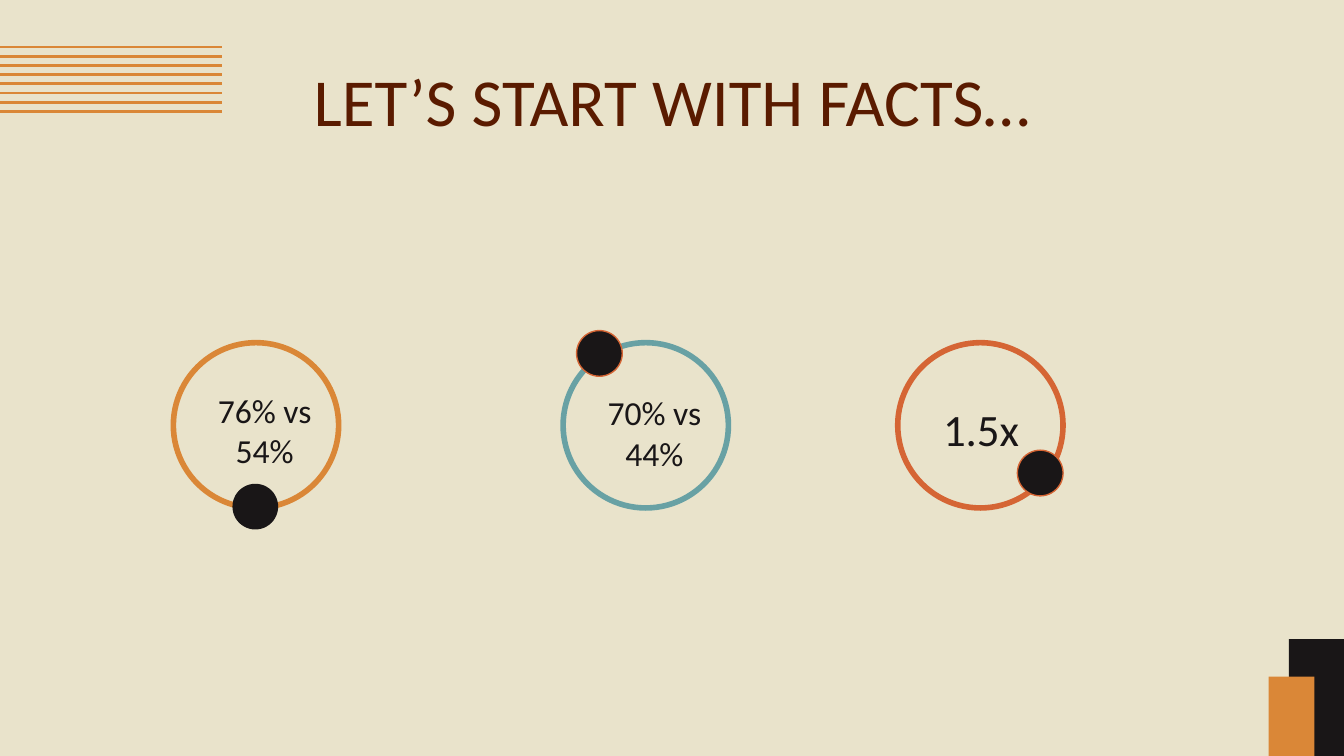
from lxml import etree
from pptx import Presentation
from pptx.dml.color import RGBColor
from pptx.enum import shapes, text
from pptx.oxml.ns import qn
from pptx.util import Inches, Pt

BLACK, ORANGE, TEAL, RUST, BROWN = "191617", "DA8737", "68A1A4", "D56534", "5A1B00"


def paint(shape, fill=None, line=None, width=0.75):
    """Set fill and outline as hex colours; None leaves that part empty."""
    shape.shadow.inherit = False
    for part, color in ((shape.fill, fill), (shape.line.fill, line)):
        if color:
            part.solid()
            part.fore_color.rgb = RGBColor.from_string(color)
        else:
            part.background()
    if line:
        shape.line.width = Pt(width)


def write(frame, words, size, color, anchor):
    frame.word_wrap = True
    frame.auto_size = text.MSO_AUTO_SIZE.NONE
    frame.vertical_anchor = anchor
    frame.margin_left = frame.margin_right = Inches(0.1)
    frame.margin_top = frame.margin_bottom = Inches(0.1)
    frame.text = words
    paragraph = frame.paragraphs[0]
    paragraph.alignment = text.PP_ALIGN.CENTER
    paragraph.font.name = "Calibri"
    paragraph.font.size = Pt(size)
    paragraph.font.color.rgb = RGBColor.from_string(color)
    return paragraph


prs = Presentation()
prs.slide_width, prs.slide_height = Inches(10), Inches(10 * 9 / 16)
slide = prs.slides.add_slide(prs.slide_layouts[5])
slide.background.fill.solid()
slide.background.fill.fore_color.rgb = RGBColor.from_string("E9E3CB")

# Title
title = slide.shapes.title
title.left, title.top = Inches(1.29), Inches(0.34)
title.width, title.height = Inches(7.42), Inches(0.8)
write(title.text_frame, "LET’S START WITH FACTS…", 36, BROWN, text.MSO_ANCHOR.TOP)

# Corner decorations: stripes top left, blocks bottom right
for i in range(8):
    y = Inches(0.35 + 0.48 * i / 7)
    stripe = slide.shapes.add_connector(
        shapes.MSO_CONNECTOR.STRAIGHT, 0, y, Inches(1.65), y)
    stripe.line.color.rgb = RGBColor.from_string(ORANGE)
    stripe.line.width = Pt(1.5)
    etree.SubElement(stripe._element.spPr, qn("a:effectLst"))

for left, width, height, color in ((9.59, 0.41, 0.87, BLACK), (9.44, 0.34, 0.59, ORANGE)):
    block = slide.shapes.add_shape(
        shapes.MSO_SHAPE.RECTANGLE, Inches(left), prs.slide_height - Inches(height),
        Inches(width), Inches(height))
    paint(block, color)

# Facts: words, size, line spacing, label position, ring left and colour,
# dot position and outline
facts = [
    ("76% vs 54%", 18, 1, (1.42, 2.98), 1.29, ORANGE, (1.73, 3.6), None),
    ("70% vs 44%", 18, 1, (4.32, 3), 4.19, TEAL, (4.29, 2.46), RUST),
    ("1.5x", 24, 1.15, (6.75, 2.94), 6.68, RUST, (7.57, 3.35), RUST),
]
for words, size, spacing, label_at, ring_left, color, dot_at, dot_line in facts:
    label = slide.shapes.add_textbox(
        Inches(label_at[0]), Inches(label_at[1]), Inches(1.1), Inches(0.44))
    write(label.text_frame, words, size, BLACK,
          text.MSO_ANCHOR.MIDDLE).line_spacing = spacing

    ring = slide.shapes.add_shape(
        shapes.MSO_SHAPE.OVAL, Inches(ring_left), Inches(2.55), Inches(1.23), Inches(1.23))
    paint(ring, line=color, width=3)

    dot = slide.shapes.add_shape(
        shapes.MSO_SHAPE.OVAL, Inches(dot_at[0]), Inches(dot_at[1]),
        Inches(0.34), Inches(0.34))
    paint(dot, BLACK, dot_line)

prs.save("out.pptx")
